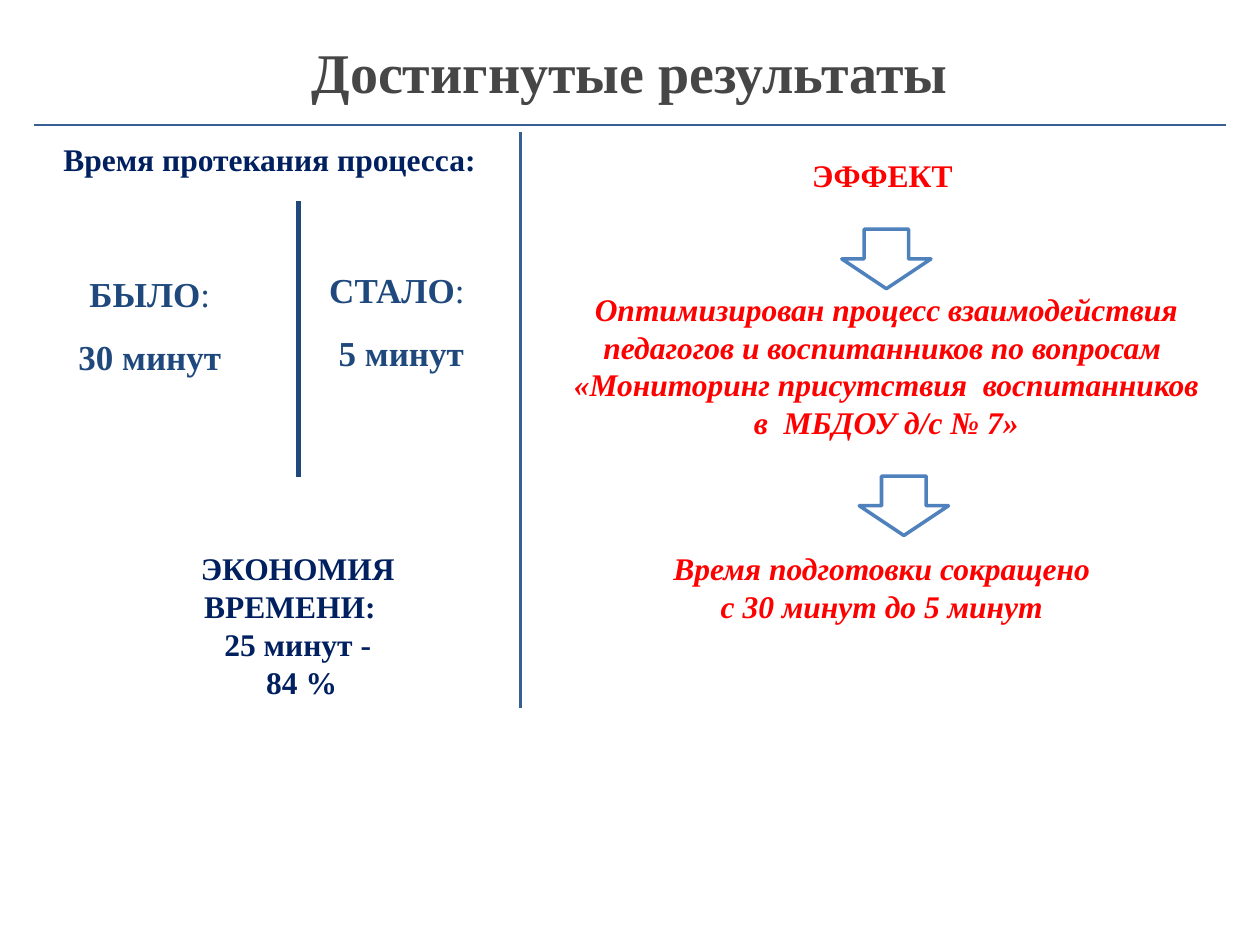
from pptx import Presentation
from pptx.dml.color import RGBColor as RGB
from pptx.enum.shapes import MSO_CONNECTOR as CONN, MSO_SHAPE as SHAPE
from pptx.enum.text import MSO_ANCHOR as ANCHOR, PP_ALIGN as ALIGN
from pptx.oxml.ns import qn
from pptx.util import Pt
from lxml import etree

GREY = RGB(0x46, 0x46, 0x46)
RED = RGB(0xFF, 0x00, 0x00)
NAVY = RGB(0x00, 0x20, 0x60)
BLUE = RGB(0x1F, 0x49, 0x7D)
RULE = RGB(0x37, 0x60, 0x92)
ARROW = RGB(0x4F, 0x81, 0xBD)
WHITE = RGB(0xFF, 0xFF, 0xFF)


class Slide:
    """Current slide with its font; all lengths are in points."""

    def __init__(self, prs, font="Times New Roman"):
        self.s = prs.slides.add_slide(prs.slide_layouts[6])
        self.font = font

    def text(self, x, y, w, h, paragraphs, color, size=18, italic=False,
             spacing=None, anchor=ANCHOR.TOP, top=3.6, wrap=True):
        """Each paragraph is a list of (text, bold) runs."""
        tf = self.s.shapes.add_textbox(Pt(x), Pt(y), Pt(w), Pt(h)).text_frame
        tf.word_wrap = wrap
        tf.vertical_anchor = anchor
        tf.margin_top = Pt(top)
        for i, runs in enumerate(paragraphs):
            p = tf.add_paragraph() if i else tf.paragraphs[0]
            p.alignment = ALIGN.CENTER
            if spacing:
                p.line_spacing = spacing
            for part, bold in runs:
                for j, line in enumerate(part.split("\n")):
                    if j:
                        p.add_line_break()
                    r = p.add_run()
                    r.text = line
                    r.font.name = self.font
                    r.font.size = Pt(size)
                    r.font.bold = bold
                    r.font.italic = italic
                    r.font.color.rgb = color

    def line(self, x1, y1, x2, y2, color, width):
        c = self.s.shapes.add_connector(CONN.STRAIGHT, Pt(x1), Pt(y1), Pt(x2), Pt(y2))
        c.line.color.rgb = color
        c.line.width = Pt(width)
        etree.SubElement(c._element.spPr, qn("a:effectLst"))

    def down_arrow(self, x, y, w=51, h=34):
        sp = self.s.shapes.add_shape(SHAPE.DOWN_ARROW, Pt(x), Pt(y), Pt(w), Pt(h))
        sp.shadow.inherit = False
        sp.fill.solid()
        sp.fill.fore_color.rgb = WHITE
        sp.line.color.rgb = ARROW
        sp.line.width = Pt(2)


def main():
    prs = Presentation()
    prs.slide_width, prs.slide_height = Pt(720), Pt(540)
    slide = Slide(prs)

    # Title and dividing rules
    slide.text(8.6, 15.1, 702.7, 51.1, [[("Достигнутые результаты", True)]],
               GREY, size=32, anchor=ANCHOR.MIDDLE)
    slide.line(19.5, 71.5, 700.5, 71.5, RULE, 1.5)
    slide.line(297.5, 75.5, 297.5, 404.5, RULE, 1.5)

    # Left half: process time before and after
    slide.text(26, 76.3, 260.6, 29, [[("Время протекания процесса: ", True)]], NAVY)
    slide.line(170.5, 115, 170.5, 272.5, BLUE, 3)
    slide.text(19.4, 140.4, 132.5, 97.2,
               [[("БЫЛО", True), (":", False)], [("30 минут", True)]],
               BLUE, size=20, spacing=1.5)
    slide.text(171.4, 138, 110.9, 99.4,
               [[("СТАЛО", True), (":", False)], [(" ", False), ("5 минут", True)]],
               BLUE, size=20, spacing=1.5)
    slide.text(66.2, 310.3, 208, 94.3,
               [[("ЭКОНОМИЯ ВРЕМЕНИ:  ", True)], [("25 минут -", True)], [(" 84 %", True)]],
               NAVY)

    # Right half: effect, step by step
    slide.text(456.5, 85.7, 100, 29, [[("ЭФФЕКТ ", True)]], RED, wrap=False)
    slide.down_arrow(481, 131)
    slide.text(320.4, 121, 372.2, 135.4,
               [[("Оптимизирован процесс взаимодействия педагогов и воспитанников "
                  "по вопросам \n«Мониторинг присутствия  воспитанников  "
                  "в  МБДОУ д/с № 7» ", True)]],
               RED, italic=True, top=44.6)
    slide.down_arrow(491, 272)
    slide.text(327.6, 310.3, 357.1, 51.1,
               [[("Время подготовки сокращено ", True)], [("с 30 минут до 5 минут ", True)]],
               RED, italic=True)

    prs.save("out.pptx")


if __name__ == "__main__":
    main()
